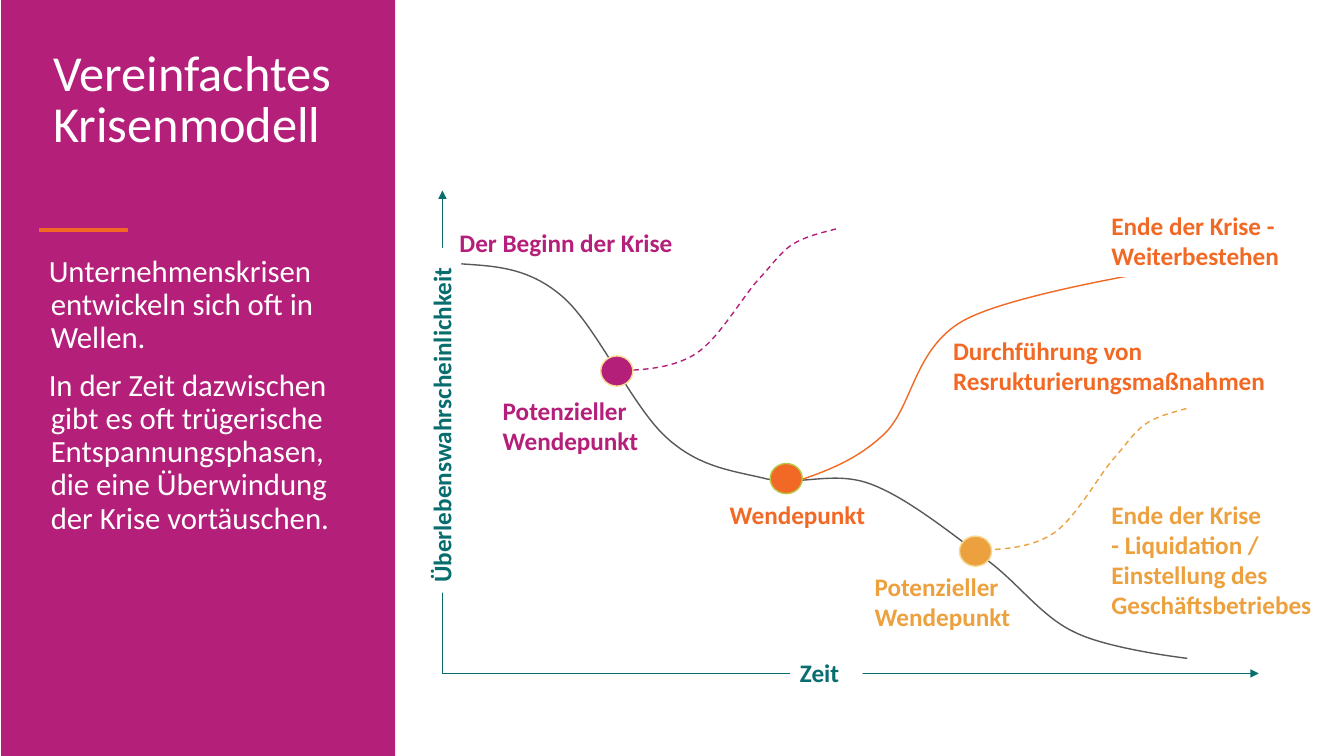
from lxml import etree
from pptx import Presentation
from pptx.dml.color import RGBColor
from pptx.enum.dml import MSO_LINE
from pptx.enum.shapes import MSO_CONNECTOR, MSO_SHAPE
from pptx.enum.text import MSO_ANCHOR, PP_ALIGN
from pptx.oxml.ns import qn
from pptx.util import Cm, Pt

DASH = MSO_LINE.DASH
STRAIGHT = MSO_CONNECTOR.STRAIGHT
RECTANGLE, OVAL = MSO_SHAPE.RECTANGLE, MSO_SHAPE.OVAL
TOP, LEFT = MSO_ANCHOR.TOP, PP_ALIGN.LEFT

FONT = "Calibri"
MAGENTA, ORANGE, AMBER = "B41F7A", "F16924", "EDA13E"
TEAL, GREY, WHITE = "086D6E", "595959", "FFFFFF"
SAND, LIME = "F6D992", "BBC646"

BODY = [
    "Unternehmenskrisen entwickeln sich oft in Wellen.",
    "In der Zeit dazwischen gibt es oft trügerische Entspannungsphasen, "
    "die eine Überwindung der Krise vortäuschen.",
]

# Curves: start point, then two control points and an end point per segment,
# in cm from the top of the vertical axis.
CRISIS = [
    (0.48, 1.85), (1.32, 1.91), (2.16, 1.93), (3.02, 2.67),
    (3.86, 3.38), (4.78, 5.44), (5.64, 6.22),
    (6.48, 6.99), (7.32, 7.06), (8.18, 7.27),
    (9.04, 7.44), (9.86, 7.06), (10.77, 7.39),
    (11.68, 7.72), (12.78, 8.61), (13.64, 9.25),
    (14.5, 9.86), (15.06, 10.72), (15.93, 11.13),
    (16.79, 11.56), (18.77, 11.79), (18.77, 11.79),
]
RECOVERY = [
    (8.64, 7.42), (9.5, 7.14), (10.36, 6.86), (11.1, 6.17),
    (11.86, 5.49), (11.86, 3.99), (13.13, 3.28),
    (14.4, 2.57), (18.7, 1.91), (18.7, 1.91),
]
# Apparent recovery, measured from its own start
RELIEF = [
    (0, 0), (0.69, -0.03), (1.37, -0.05), (1.96, -0.43),
    (2.51, -0.81), (3.05, -1.8), (3.43, -2.26),
    (3.84, -2.72), (3.96, -2.95), (4.27, -3.18),
    (4.6, -3.4), (4.98, -3.48), (5.33, -3.58),
]
# start x, start y, horizontal stretch, colour
RELIEFS = [(13.44, 9.07, 1, AMBER), (4.32, 4.55, 1.05, MAGENTA)]
# left, top, fill, outline
TURNING_POINTS = [
    (3.99, 4.17, MAGENTA, SAND),
    (8.26, 6.88, ORANGE, LIME),
    (13.03, 8.71, AMBER, SAND),
]
# text, box, colour, fill, wrap
LABELS = [
    ("Wendepunkt", (6.99, 7.65, 3.96, 1.02), ORANGE, None, False),
    ("Ende der Krise\n- Liquidation /\nEinstellung des\nGeschäftsbetriebes",
     (16.61, 7.65, 5.64, 4.7), AMBER, None, True),
    ("Der Beginn der Krise", (0.18, 0.81, 5.92, 1.02), MAGENTA, None, False),
    ("Potenzieller\nWendepunkt", (10.64, 9.47, 3.96, 1.8), AMBER, None, False),
    ("Durchführung von\nResrukturierungsmaßnahmen",
     (12.62, 3.53, 9.14, 1.8), ORANGE, None, True),
    ("Ende der Krise - Weiterbestehen",
     (16.61, 0.38, 5.21, 1.8), ORANGE, WHITE, True),
    ("Potenzieller\nWendepunkt", (1.27, 5.03, 3.96, 1.8), MAGENTA, None, False),
]


def rgb(value):
    return RGBColor.from_string(value)


def add_filled(slide, preset, box, fill, outline=None):
    shape = slide.shapes.add_shape(preset, *map(Cm, box))
    shape.shadow.inherit = False
    shape.fill.solid()
    shape.fill.fore_color.rgb = rgb(fill)
    if outline:
        shape.line.color.rgb = rgb(outline)
        shape.line.width = Pt(1)
    else:
        shape.line.fill.background()
    return shape


def add_run(paragraph, text, size, color, bold=False):
    run = paragraph.add_run()
    run.text = text
    run.font.name = FONT
    run.font.size = Pt(size)
    run.font.bold = bold
    run.font.color.rgb = rgb(color)


def add_label(slide, text, box, color, fill=None, wrap=True):
    """Bold caption; each line after the first follows a line break."""
    if fill:
        label = add_filled(slide, RECTANGLE, box, fill)
    else:
        label = slide.shapes.add_textbox(*map(Cm, box))
    frame = label.text_frame
    frame.word_wrap = wrap
    frame.vertical_anchor = TOP
    paragraph = frame.paragraphs[0]
    paragraph.alignment = LEFT
    for number, line in enumerate(text.split("\n")):
        if number:
            paragraph.add_line_break()
        add_run(paragraph, line, 18, color, bold=True)
    return label


def add_axis(slide, start, end):
    axis = slide.shapes.add_connector(STRAIGHT, *map(Cm, start + end))
    axis.line.color.rgb = rgb(TEAL)
    axis.line.width = Pt(0.5)
    etree.SubElement(axis.line._get_or_add_ln(), qn("a:tailEnd"), type="triangle")
    etree.SubElement(axis._element.spPr, qn("a:effectLst"))


def add_curve(slide, points, color, dash=None):
    """Open outline whose points after the first form Bézier segments."""
    start, *rest = [(Cm(x), Cm(y)) for x, y in points]
    builder = slide.shapes.build_freeform(*start)
    builder.add_line_segments(rest, close=False)
    curve = builder.convert_to_shape()
    outline = next(curve._element.iter(qn("a:path")))
    steps = outline.findall(qn("a:lnTo"))
    for first in range(0, len(steps), 3):
        bezier = etree.SubElement(outline, qn("a:cubicBezTo"))
        for step in steps[first:first + 3]:
            bezier.append(step[0])
            outline.remove(step)
    curve.shadow.inherit = False
    curve.fill.background()
    curve.line.color.rgb = rgb(color)
    curve.line.width = Pt(1)
    if dash:
        curve.line.dash_style = dash


def add_sidebar(slide, left, top, width, height):
    add_filled(slide, RECTANGLE, (left, top, width, height), MAGENTA)

    body = slide.shapes.add_textbox(
        Cm(left + 0.95), Cm(top + 6.32), Cm(8.13), Cm(9.7)).text_frame
    body.word_wrap = True
    for number, text in enumerate(BODY):
        paragraph = body.add_paragraph() if number else body.paragraphs[0]
        properties = paragraph._p.get_or_add_pPr()
        properties.set("marL", str(Cm(0.05)))
        properties.set("indent", str(-Cm(0.05)))
        paragraph.line_spacing = 0.9
        if number:
            paragraph.space_before = Pt(10)
        add_run(paragraph, text, 22, WHITE)

    title = slide.shapes.add_textbox(
        Cm(left + 1.07), Cm(top + 1.17), Cm(8.41), Cm(3.89)).text_frame
    title.word_wrap = True
    title.paragraphs[0].line_spacing = Pt(36.2)
    add_run(title.paragraphs[0], "Vereinfachtes Krisenmodell", 36, WHITE)

    add_filled(slide, RECTANGLE, (left + 0.97, top + 5.77, 2.21, 0.05),
               ORANGE, ORANGE)


def add_crisis_model(slide, left, top, width, height):
    def shifted(points, dx=left, dy=top, stretch=1):
        return [(dx + x * stretch, dy + y) for x, y in points]

    def placed(box):
        x, y, *size = box
        return (left + x, top + y, *size)

    origin = (left, top + height)
    add_axis(slide, origin, (left, top))
    add_axis(slide, origin, (left + width, top + height))
    add_label(slide, "Zeit", placed((8.76, 11.63, 1.83, 1.02)), TEAL, WHITE, False)
    survival = add_label(slide, "Überlebenswahrscheinlichkeit",
                         placed((-4.37, 5.28, 8.69, 1.02)), TEAL, WHITE)
    survival.rotation = 270

    add_curve(slide, shifted(CRISIS), GREY)
    add_curve(slide, shifted(RECOVERY), ORANGE)
    for x, y, stretch, color in RELIEFS:
        add_curve(slide, shifted(RELIEF, left + x, top + y, stretch), color, DASH)
    for x, y, fill, outline in TURNING_POINTS:
        add_filled(slide, OVAL, placed((x, y, 0.81, 0.76)), fill, outline)
    for text, box, color, fill, wrap in LABELS:
        add_label(slide, text, placed(box), color, fill, wrap)


def main():
    deck = Presentation()
    deck.slide_width, deck.slide_height = Cm(33.87), Cm(19.05)
    slide = deck.slides.add_slide(deck.slide_layouts[6])
    add_sidebar(slide, 0.03, 0, 9.93, 19.05)
    add_crisis_model(slide, 11.15, 4.8, 20.57, 12.17)
    deck.save("out.pptx")


if __name__ == "__main__":
    main()
